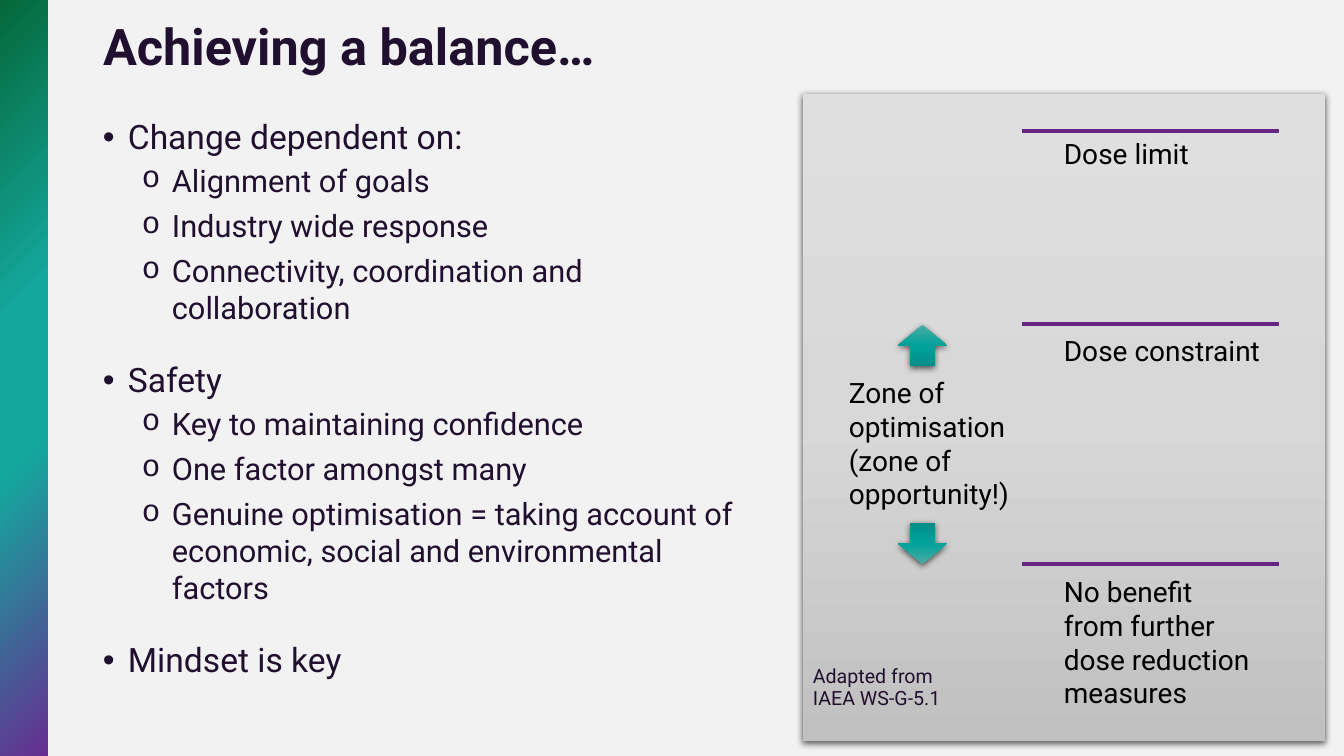
from lxml import etree
from pptx import Presentation
from pptx import util as u
from pptx.dml.color import RGBColor
from pptx.enum import shapes, text
from pptx.oxml import parse_xml
from pptx.oxml.ns import nsdecls, qn

INK = RGBColor(0x21, 0x0F, 0x2F)
BLACK = RGBColor(0, 0, 0)
PURPLE = RGBColor(0x66, 0x24, 0x83)
PALE = RGBColor(0xF2, 0xF2, 0xF2)
VIOLET = RGBColor(0x66, 0x2E, 0x91)
TEAL = RGBColor(0x14, 0xA7, 0x9D)
GREEN = RGBColor(0x05, 0x68, 0x3A)
PANEL_STOPS = [(0, RGBColor(0xDF, 0xDF, 0xDF)), (50, RGBColor(0xD8, 0xD8, 0xD8)),
               (100, RGBColor(0xC0, 0xC0, 0xC0))]
ARROW_STOPS = [(0, RGBColor(0x4B, 0xAC, 0xA5)), (50, RGBColor(0x00, 0xA1, 0x9A)),
               (100, RGBColor(0x00, 0x8F, 0x89))]
BAND_STOPS = [(0, VIOLET), (40, TEAL), (60, TEAL), (100, GREEN)]
DOWNWARD = '<a:lin ang="5400000" scaled="0"/>'
FROM_CORNER = '<a:path path="circle"><a:fillToRect l="100000" t="100000"/></a:path>'

BODY = [
    ("Change dependent on:", ["Alignment of goals", "Industry wide response",
                              "Connectivity, coordination and collaboration"]),
    ("Safety", ["Key to maintaining confidence", "One factor amongst many",
                "Genuine optimisation = taking account of economic, social and environmental factors"]),
    ("Mindset is key", []),
]


def px(value):
    return u.Emu(round(value * 914400 / 100.8))


class SlideBuilder:
    font = "Roboto"

    def __init__(self, presentation):
        self.slide = presentation.slides.add_slide(presentation.slide_layouts[5])
        self.slide.background.fill.solid()
        self.slide.background.fill.fore_color.rgb = PALE

    def style(self, paragraph, size, color, bold=False):
        for run in paragraph.runs:
            run.font.name = self.font
            run.font.size = u.Pt(size)
            run.font.bold = bold
            run.font.color.rgb = color

    def title(self, words, left, top, width, height):
        shape = self.slide.shapes.title
        shape.left, shape.top, shape.width, shape.height = map(px, (left, top, width, height))
        frame = shape.text_frame
        frame.text = words
        frame.auto_size = text.MSO_AUTO_SIZE.NONE
        frame.vertical_anchor = text.MSO_ANCHOR.MIDDLE
        paragraph = frame.paragraphs[0]
        paragraph.alignment = text.PP_ALIGN.LEFT
        paragraph.line_spacing = 0.9
        self.style(paragraph, 36, INK, True)

    def gradient_shape(self, preset, left, top, width, height, stops, direction,
                       shadow=True, flipped=False):
        shape = self.slide.shapes.add_shape(preset, *map(px, (left, top, width, height)))
        shape.line.fill.background()
        shape.shadow.inherit = False
        properties = shape._element.spPr
        marks = "".join(f'<a:gs pos="{position * 1000}"><a:srgbClr val="{color}"/></a:gs>'
                        for position, color in stops)
        properties.find(qn("a:prstGeom")).addnext(parse_xml(
            f'<a:gradFill {nsdecls("a")} rotWithShape="1"><a:gsLst>{marks}</a:gsLst>'
            f'{direction}</a:gradFill>'))
        if shadow:
            properties.find(qn("a:effectLst")).append(parse_xml(
                f'<a:outerShdw {nsdecls("a")} blurRad="57150" dist="19050" dir="5400000" '
                'algn="ctr" rotWithShape="0"><a:srgbClr val="000000">'
                '<a:alpha val="63000"/></a:srgbClr></a:outerShdw>'))
        if flipped:
            properties.find(qn("a:xfrm")).set("flipV", "1")

    def level_line(self, left, right, y):
        line = self.slide.shapes.add_connector(
            shapes.MSO_CONNECTOR.STRAIGHT, *map(px, (left, y, right, y)))
        line.line.color.rgb = PURPLE
        line.line.width = u.Pt(3)
        etree.SubElement(line._element.spPr, qn("a:effectLst"))

    def label(self, words, left, top, width, height, size=20, color=BLACK, spacing=1.0):
        shape = self.slide.shapes.add_textbox(*map(px, (left, top, width, height)))
        frame = shape.text_frame
        frame.text = words
        frame.word_wrap = True
        frame.paragraphs[0].line_spacing = spacing
        self.style(frame.paragraphs[0], size, color)

    def bullet(self, paragraph, words, mark, mark_font, indent, hanging, size):
        paragraph.text = words
        properties = paragraph._p.get_or_add_pPr()
        properties.set("marL", str(px(indent)))
        properties.set("indent", str(-px(hanging)))
        etree.SubElement(properties, qn("a:buFont")).set("typeface", mark_font)
        etree.SubElement(properties, qn("a:buChar")).set("char", mark)
        self.style(paragraph, size, INK)

    def outline(self, groups, left, top, width, height):
        shape = self.slide.shapes.add_textbox(*map(px, (left, top, width, height)))
        frame = shape.text_frame
        frame.word_wrap = True
        for index, (heading, points) in enumerate(groups):
            paragraph = frame.add_paragraph() if index else frame.paragraphs[0]
            self.bullet(paragraph, heading, "•", "Arial", 25, 25, 24)
            paragraph.line_spacing = 0.9
            if index:
                paragraph.space_before = u.Pt(24)
            for point in points:
                paragraph = frame.add_paragraph()
                paragraph.level = 1
                self.bullet(paragraph, point, "o", "Courier New", 69, 30, 22)
                paragraph.space_before = paragraph.space_after = u.Pt(3)


def main():
    presentation = Presentation()
    presentation.slide_width, presentation.slide_height = px(1344), px(756)
    builder = SlideBuilder(presentation)
    rectangle, arrow = shapes.MSO_SHAPE.RECTANGLE, shapes.MSO_SHAPE.UP_ARROW

    builder.gradient_shape(rectangle, 0, 0, 48, 756, BAND_STOPS, FROM_CORNER, shadow=False)
    builder.gradient_shape(rectangle, 803, 94, 522, 647, PANEL_STOPS, DOWNWARD)
    builder.title("Achieving a balance…", 93, 15, 955, 68)
    builder.outline(BODY, 93, 116, 665, 599)

    for y in (131, 324, 564):
        builder.level_line(1022, 1279, y)
    builder.label("Dose limit", 1054, 132, 150, 40)
    builder.label("Dose constraint", 1054, 329, 230, 40)
    builder.label("No benefit from further dose reduction measures", 1054, 570, 209, 132)
    builder.label("Zone of optimisation (zone of opportunity!)", 839, 371, 192, 132)
    for top, flipped in ((325, False), (523, True)):
        builder.gradient_shape(arrow, 898, top, 49, 41, ARROW_STOPS, DOWNWARD, flipped=flipped)
    builder.label("Adapted from IAEA WS-G-5.1", 803, 662, 157, 32, 14, INK, 0.9)
    presentation.save("out.pptx")


if __name__ == "__main__":
    main()
